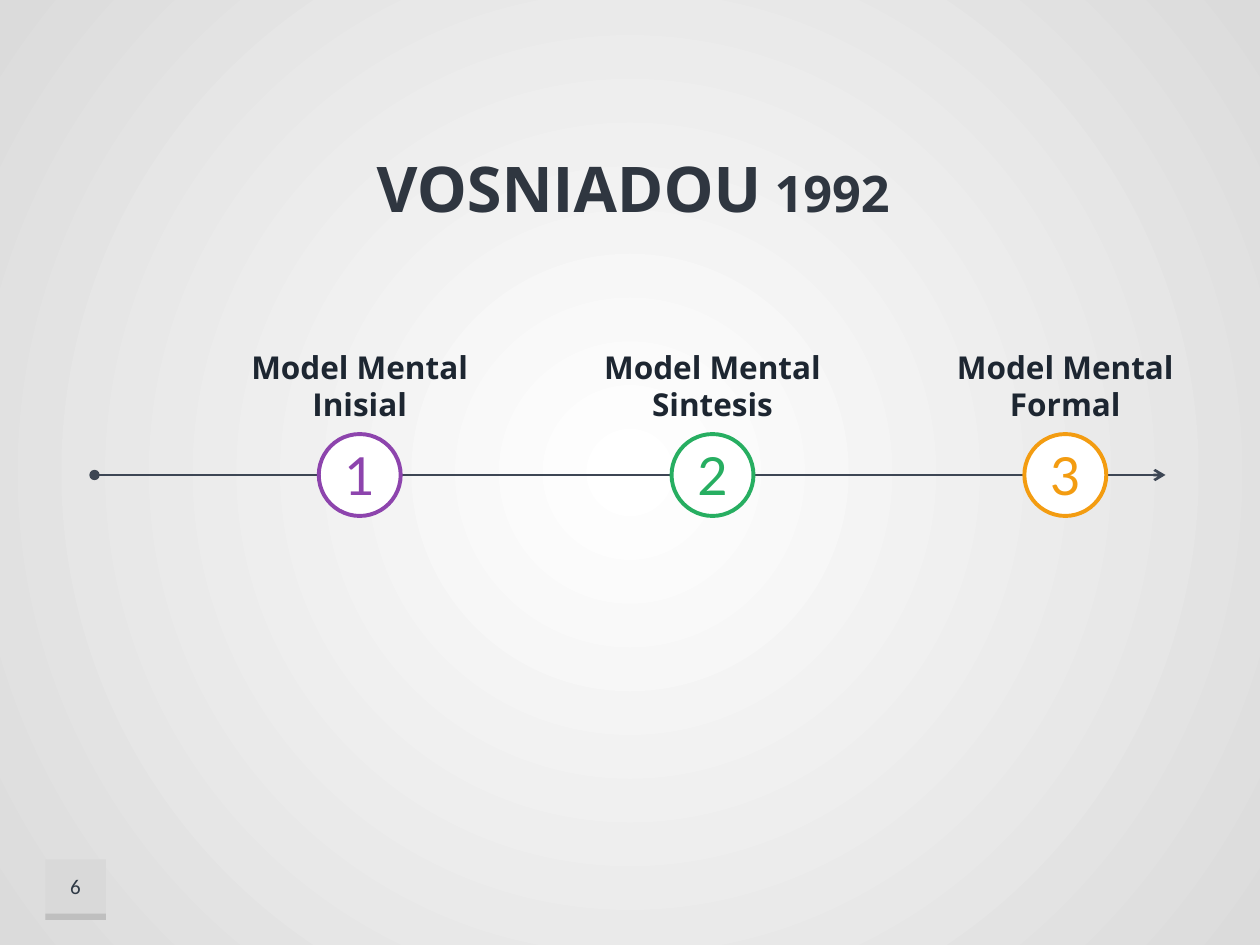
from dataclasses import dataclass

from lxml import etree
from pptx import Presentation
from pptx.dml.color import RGBColor
from pptx.enum.shapes import MSO_CONNECTOR, MSO_SHAPE
from pptx.enum.text import MSO_ANCHOR, PP_ALIGN
from pptx.oxml.ns import qn
from pptx.util import Inches, Pt

RECTANGLE, OVAL = MSO_SHAPE.RECTANGLE, MSO_SHAPE.OVAL
STRAIGHT = MSO_CONNECTOR.STRAIGHT
CENTER, MIDDLE = PP_ALIGN.CENTER, MSO_ANCHOR.MIDDLE

WIDTH, HEIGHT = 10, 7.5
COLORS = {
    "white": "FFFFFF", "edge": "DBDBDB", "title": "2F3640", "page": "2F3A46",
    "badge": "D9D9D9", "badge_base": "BFBFBF", "axis": "3D4654",
    "label": "1D2631", "purple": "8D44AD", "green": "27AE61", "orange": "F39C11",
}

# Timeline grid: one column per stage
FIRST_CENTER, COLUMN = 2.855, 2.8
AXIS_Y, AXIS_LEFT = 3.77, 0.75
DIAMETER = 0.65
LABEL_Y, LABEL_WIDTH, LABEL_HEIGHT = 3.06, 2.4, 0.7


@dataclass(frozen=True)
class Box:
    left: float
    top: float
    width: float
    height: float

    def emu(self) -> list:
        return [Inches(v) for v in (self.left, self.top, self.width, self.height)]


@dataclass(frozen=True)
class Style:
    font: str
    size: float
    color: str
    bold: bool = False


@dataclass(frozen=True)
class Stage:
    label: str
    color: str


TITLE = Style("Open Sans", 36, "title", True)
LABEL = Style("Open Sans", 18, "label", True)
PAGE = Style("Calibri", 12, "page")
STAGES = [
    Stage("Model Mental Inisial", "purple"),
    Stage("Model Mental Sintesis", "green"),
    Stage("Model Mental Formal", "orange"),
]


def color(name: str) -> RGBColor:
    return RGBColor.from_string(COLORS[name])


def centered(x: float, y: float, width: float, height: float) -> Box:
    return Box(x - width / 2, y - height / 2, width, height)


def write(shape, text: str, style: Style):
    """Write one centred paragraph and return its run."""
    frame = shape.text_frame
    frame.text = text
    frame.word_wrap = True
    frame.vertical_anchor = MIDDLE
    paragraph = frame.paragraphs[0]
    paragraph.alignment = CENTER
    run = paragraph.runs[0]
    run.font.name = style.font
    run.font.size = Pt(style.size)
    run.font.bold = style.bold
    run.font.color.rgb = color(style.color)
    return run


def add_text(slide, box: Box, text: str, style: Style):
    return write(slide.shapes.add_textbox(*box.emu()), text, style)


def add_block(slide, kind, box: Box, fill: str, outline: str = ""):
    shape = slide.shapes.add_shape(kind, *box.emu())
    shape.shadow.inherit = False
    shape.fill.solid()
    shape.fill.fore_color.rgb = color(fill)
    if outline:
        shape.line.color.rgb = color(outline)
        shape.line.width = Pt(2.25)
    else:
        shape.line.fill.background()
    return shape


def paint_background(slide) -> None:
    fill = slide.background.fill
    fill.gradient()
    for stop, name in zip(fill.gradient_stops, ("white", "edge")):
        stop.color.rgb = color(name)
    gradient = slide._element.find(".//" + qn("a:gradFill"))
    gradient.remove(gradient.find(qn("a:lin")))
    circle = etree.SubElement(gradient, qn("a:path"), path="circle")
    sides = dict.fromkeys("ltrb", "50000")
    etree.SubElement(circle, qn("a:fillToRect"), **sides)


def add_axis(slide) -> None:
    y = Inches(AXIS_Y)
    axis = slide.shapes.add_connector(
        STRAIGHT, Inches(AXIS_LEFT), y, Inches(WIDTH - AXIS_LEFT), y)
    axis.line.color.rgb = color("axis")
    axis.line.width = Pt(1.5)
    line = axis.line._get_or_add_ln()
    etree.SubElement(line, qn("a:headEnd"), type="oval")
    etree.SubElement(line, qn("a:tailEnd"), type="arrow")
    etree.SubElement(axis._element.spPr, qn("a:effectLst"))


def add_stage(slide, index: int, stage: Stage) -> None:
    x = FIRST_CENTER + index * COLUMN
    circle = add_block(slide, OVAL, centered(x, AXIS_Y, DIAMETER, DIAMETER),
                       "white", stage.color)
    write(circle, str(index + 1), Style("Lato", 30, stage.color))
    frame = circle.text_frame
    frame.margin_left = frame.margin_right = Inches(0.07)
    frame.margin_top = frame.margin_bottom = Inches(0.04)
    add_text(slide, centered(x, LABEL_Y, LABEL_WIDTH, LABEL_HEIGHT),
             stage.label, LABEL)


def main() -> None:
    presentation = Presentation()
    presentation.slide_width = Inches(WIDTH)
    presentation.slide_height = Inches(HEIGHT)
    slide = presentation.slides.add_slide(presentation.slide_layouts[6])
    paint_background(slide)

    # Page number badge
    add_block(slide, RECTANGLE, Box(0.36, 6.82, 0.48, 0.48), "badge")
    add_block(slide, RECTANGLE, Box(0.36, 7.25, 0.48, 0.05), "badge_base")
    add_text(slide, Box(0.36, 6.82, 0.48, 0.43), "6", PAGE)

    # Title in small capitals
    title = add_text(slide, Box(1.25, 1.15, 7.55, 0.68), "VOSNIADOU 1992", TITLE)
    title.font._element.set("cap", "small")

    # Timeline
    add_axis(slide)
    for index, stage in enumerate(STAGES):
        add_stage(slide, index, stage)

    presentation.save("out.pptx")


if __name__ == "__main__":
    main()
